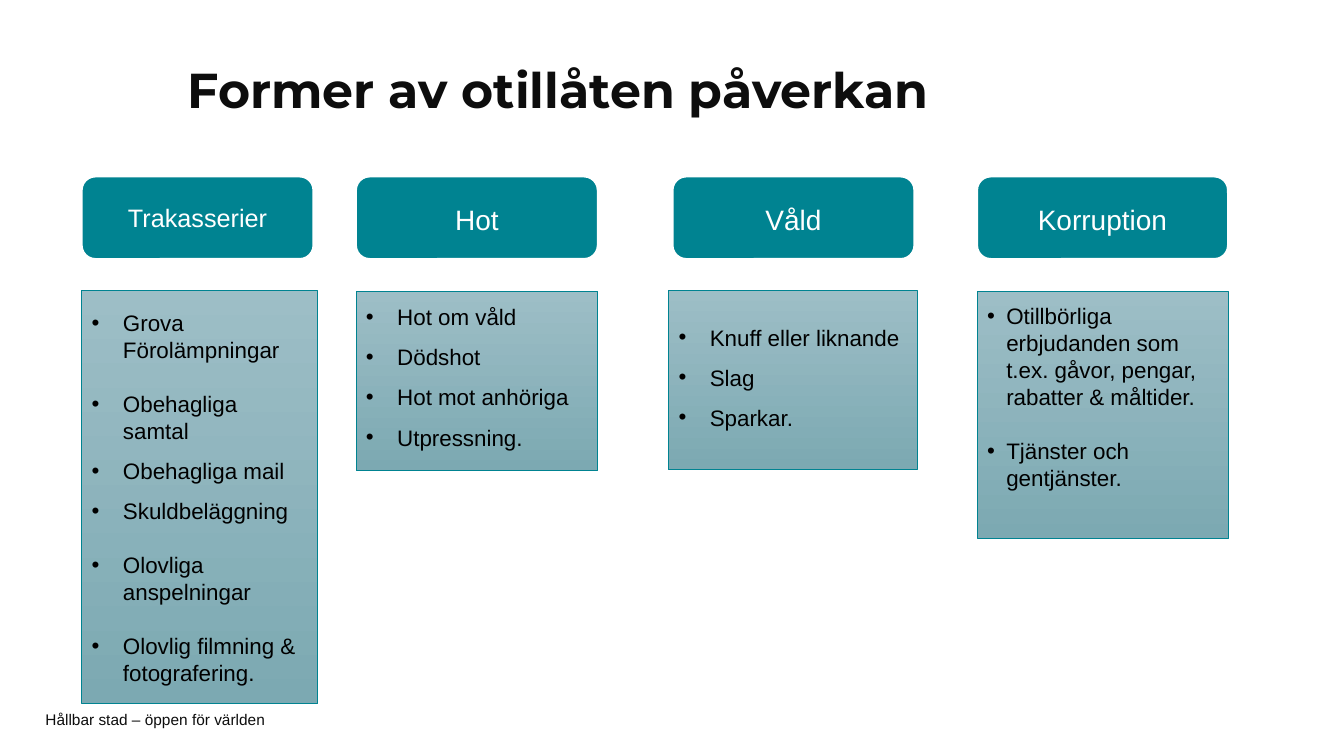
from dataclasses import dataclass

from lxml.etree import SubElement
from pptx import Presentation
from pptx.dml.color import RGBColor
from pptx.enum.shapes import MSO_SHAPE as Preset
from pptx.enum.text import MSO_ANCHOR as Anchor, MSO_AUTO_SIZE as AutoSize, PP_ALIGN as Align
from pptx.oxml.ns import qn
from pptx.shapes.placeholder import SlidePlaceholder
from pptx.slide import Slide
from pptx.text.text import TextFrame, _Paragraph as Paragraph
from pptx.util import Inches, Pt

TEAL = RGBColor(0x00, 0x83, 0x91)
MIST = RGBColor(0x9D, 0xBE, 0xC6)
HAZE = RGBColor(0x7C, 0xA9, 0xB2)
INK = RGBColor(0x0D, 0x0D, 0x0D)
BLACK = RGBColor(0x00, 0x00, 0x00)
WHITE = RGBColor(0xFF, 0xFF, 0xFF)

HEADING_TOP, HEADING_HEIGHT = 1.75, 0.82
LINE_HEIGHT = 19.25
TIGHT = 9.35
WIDE = LINE_HEIGHT


@dataclass(frozen=True)
class Box:
    left: float
    top: float
    width: float
    height: float


@dataclass(frozen=True)
class Item:
    text: str
    gap: float = TIGHT


@dataclass(frozen=True)
class Form:
    heading: str
    heading_left: float
    heading_width: float
    panel: Box
    inset_top: float
    items: tuple[Item, ...]
    indent: float = 0.31
    heading_size: float = 20
    heading_spacing: float = 1.1


FORMS = (
    Form("Trakasserier", 0.81, 2.3, Box(0.81, 2.88, 2.34, 4.1), 0.19, (
        Item("Grova Förolämpningar"),
        Item("Obehagliga samtal", WIDE),
        Item("Obehagliga mail"),
        Item("Skuldbeläggning"),
        Item("Olovliga anspelningar", WIDE),
        Item("Olovlig filmning & fotografering.", WIDE),
    ), heading_size=18, heading_spacing=1.0),
    Form("Hot", 3.53, 2.4, Box(3.53, 2.89, 2.4, 1.78), 0.12, (
        Item("Hot om våld"),
        Item("Dödshot"),
        Item("Hot mot anhöriga"),
        Item("Utpressning."),
    )),
    Form("Våld", 6.67, 2.4, Box(6.63, 2.88, 2.47, 1.78), 0.33, (
        Item("Knuff eller liknande"),
        Item("Slag"),
        Item("Sparkar."),
    )),
    Form("Korruption", 9.69, 2.49, Box(9.69, 2.89, 2.49, 2.45), 0.11, (
        Item("Otillbörliga erbjudanden som t.ex. gåvor, pengar, rabatter & måltider."),
        Item("Tjänster och gentjänster.", WIDE),
    ), indent=0.19),
)


def write(paragraph: Paragraph, text: str, size: float, color: RGBColor,
          face: str = "Arial", bold: bool = False) -> None:
    run = paragraph.add_run()
    run.text = text
    run.font.name = face
    run.font.size = Pt(size)
    run.font.bold = bold
    run.font.color.rgb = color


def place(shape: SlidePlaceholder, box: Box) -> None:
    shape.left, shape.top = Inches(box.left), Inches(box.top)
    shape.width, shape.height = Inches(box.width), Inches(box.height)


def set_frame(frame: TextFrame, anchor: Anchor, side: float, top: float, bottom: float) -> None:
    frame.word_wrap = True
    frame.auto_size = AutoSize.NONE
    frame.vertical_anchor = anchor
    frame.margin_left = frame.margin_right = Inches(side)
    frame.margin_top, frame.margin_bottom = Inches(top), Inches(bottom)


def add_bullet(paragraph: Paragraph, indent: float) -> None:
    properties = paragraph._p.get_or_add_pPr()
    properties.set("marL", str(Inches(indent)))
    properties.set("indent", str(-Inches(indent)))
    SubElement(properties, qn("a:buFont"), typeface="Arial")
    SubElement(properties, qn("a:buChar"), char="•")


def draw_heading(slide: Slide, form: Form) -> None:
    heading = slide.shapes.add_shape(
        Preset.ROUNDED_RECTANGLE, Inches(form.heading_left), Inches(HEADING_TOP),
        Inches(form.heading_width), Inches(HEADING_HEIGHT))
    heading.shadow.inherit = False
    heading.fill.solid()
    heading.fill.fore_color.rgb = TEAL
    heading.line.color.rgb = WHITE
    heading.line.width = Pt(1.5)
    set_frame(heading.text_frame, Anchor.MIDDLE, 0.1, 0.05, 0.05)
    label = heading.text_frame.paragraphs[0]
    label.alignment = Align.CENTER
    label.line_spacing = form.heading_spacing
    write(label, form.heading, form.heading_size, WHITE)


def fill_panel(panel: SlidePlaceholder, form: Form) -> None:
    place(panel, form.panel)
    panel.fill.gradient()
    panel.fill.gradient_angle = 270
    for stop, color in zip(panel.fill.gradient_stops, (MIST, HAZE)):
        stop.color.rgb = color
    panel.line.color.rgb = TEAL
    panel.line.width = Pt(0.5)
    frame = panel.text_frame
    set_frame(frame, Anchor.TOP, 0.1, form.inset_top, 0.05)
    for number, item in enumerate(form.items):
        entry = frame.add_paragraph() if number else frame.paragraphs[0]
        add_bullet(entry, form.indent)
        entry.alignment = Align.LEFT
        entry.line_spacing = Pt(LINE_HEIGHT)
        entry.space_before = Pt(item.gap if number else 0)
        entry.space_after = Pt(0)
        write(entry, item.text, 16, BLACK)


def main() -> None:
    deck = Presentation()
    deck.slide_width, deck.slide_height = Inches(13.33), Inches(7.5)
    slide = deck.slides.add_slide(deck.slide_layouts.get_by_name("Comparison"))

    title = slide.shapes.title
    place(title, Box(1.86, 0.51, 7.83, 0.81))
    set_frame(title.text_frame, Anchor.MIDDLE, 0, 0.05, 0.05)
    headline = title.text_frame.paragraphs[0]
    headline.alignment = Align.LEFT
    headline.line_spacing = 0.9
    write(headline, "Former av otillåten påverkan", 35, INK, "Montserrat", True)

    panels = [holder for holder in slide.placeholders if holder.placeholder_format.idx]
    for form, panel in zip(FORMS, panels):
        draw_heading(slide, form)
        fill_panel(panel, form)

    motto = slide.shapes.add_textbox(Inches(0.45), Inches(7.06), Inches(9.45), Inches(0.16))
    set_frame(motto.text_frame, Anchor.MIDDLE, 0, 0, 0)
    write(motto.text_frame.paragraphs[0], "Hållbar stad – öppen för världen", 11, INK)

    deck.save("out.pptx")


if __name__ == "__main__":
    main()
